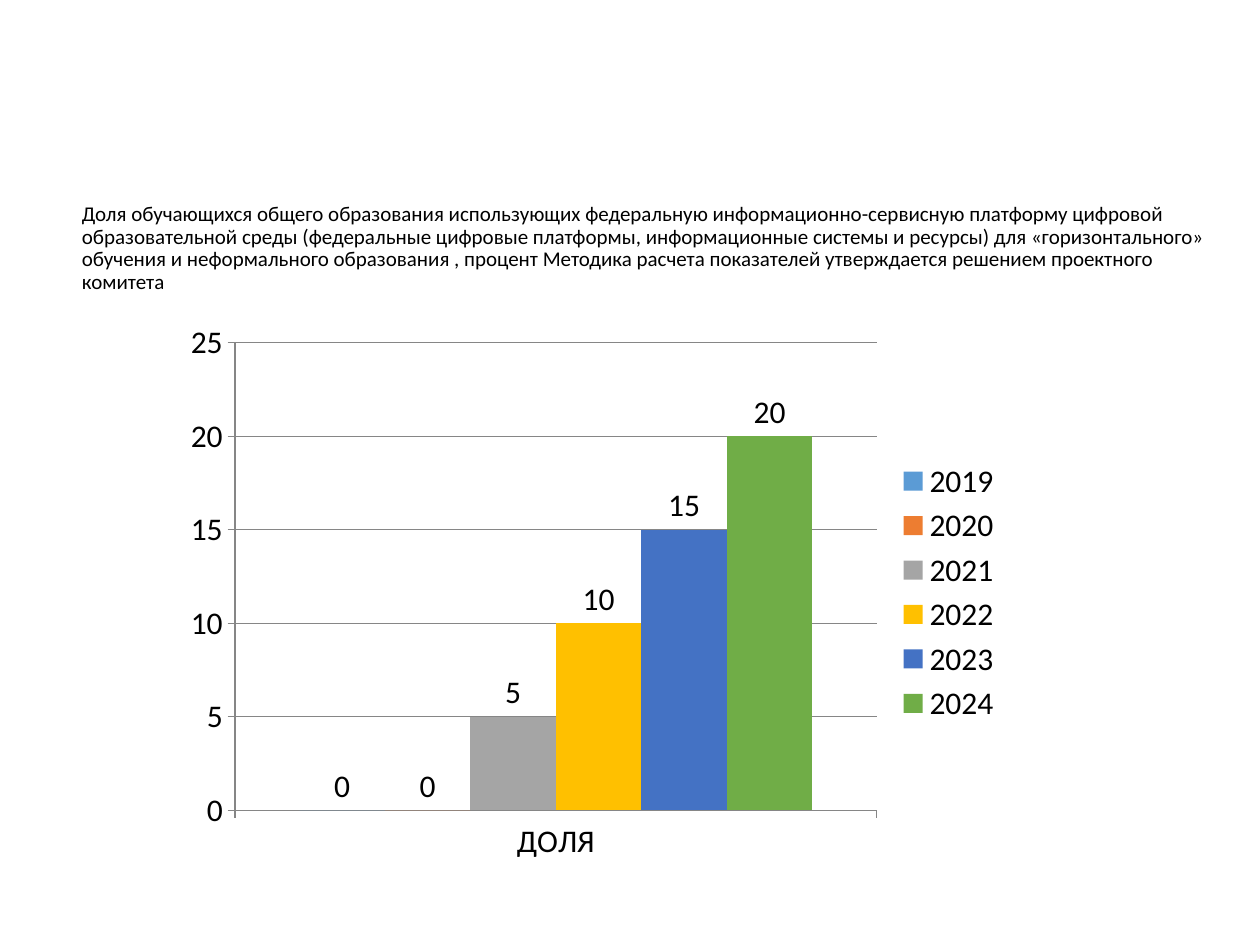
"""Build a slide with a yearly share column chart under a descriptive title."""
import pptx
import pptx.chart.data
import pptx.dml.color
import pptx.enum.chart
import pptx.enum.text
import pptx.util

Pt = pptx.util.Pt
RGB = pptx.dml.color.RGBColor.from_string

theme = {
    "font": "Calibri",
    "text": RGB("000000"),
    "line": RGB("868686"),
    "title_size": Pt(12),
    "chart_size": Pt(18),
}
shares = [
    ("2019", 0, "5B9BD5"),
    ("2020", 0, "ED7D31"),
    ("2021", 5, "A5A5A5"),
    ("2022", 10, "FFC000"),
    ("2023", 15, "4472C4"),
    ("2024", 20, "70AD47"),
]

prs = pptx.Presentation()
prs.slide_width, prs.slide_height = Pt(720), Pt(540)
s = prs.slides.add_slide(prs.slide_layouts[5])

sp = s.shapes.title
sp.left, sp.top, sp.width, sp.height = Pt(39.6), Pt(82), Pt(656.6), Pt(120.2)
tf = sp.text_frame
tf.word_wrap = True
tf.auto_size = pptx.enum.text.MSO_AUTO_SIZE.NONE
tf.vertical_anchor = pptx.enum.text.MSO_ANCHOR.MIDDLE
p = tf.paragraphs[0]
p.alignment = pptx.enum.text.PP_ALIGN.LEFT
p.line_spacing = 0.9
p.space_before = Pt(0)
r = p.add_run()
r.text = (
    "Доля обучающихся общего образования использующих федеральную "
    "информационно-сервисную платформу цифровой образовательной среды "
    "(федеральные цифровые платформы, информационные системы и ресурсы) "
    "для «горизонтального» обучения и неформального образования , процент "
    "Методика расчета показателей утверждается решением проектного комитета"
)
r.font.name = theme["font"]
r.font.size = theme["title_size"]
r.font.color.rgb = theme["text"]

data = pptx.chart.data.CategoryChartData()
data.categories = ["ДОЛЯ"]
for year, share, color in shares:
    data.add_series(year, [share])

chart = s.shapes.add_chart(
    pptx.enum.chart.XL_CHART_TYPE.COLUMN_CLUSTERED,
    Pt(99.4), Pt(178.6), Pt(480.2), Pt(319.7), data,
).chart
chart.has_title = False
chart.font.name = theme["font"]
chart.font.size = theme["chart_size"]
chart.font.color.rgb = theme["text"]
chart.has_legend = True
chart.legend.position = pptx.enum.chart.XL_LEGEND_POSITION.RIGHT
chart.legend.include_in_layout = False

for axis in (chart.category_axis, chart.value_axis):
    axis.major_tick_mark = pptx.enum.chart.XL_TICK_MARK.OUTSIDE
    axis.format.line.color.rgb = theme["line"]
    axis.format.line.width = Pt(0.75)

axis = chart.value_axis
axis.minimum_scale, axis.maximum_scale, axis.major_unit = 0, 25, 5
axis.has_major_gridlines = True
axis.major_gridlines.format.line.color.rgb = theme["line"]
axis.major_gridlines.format.line.width = Pt(0.75)

plot = chart.plots[0]
plot.gap_width = 150
plot.overlap = 0
plot.vary_by_categories = False
for series, (year, share, color) in zip(plot.series, shares):
    series.format.fill.solid()
    series.format.fill.fore_color.rgb = RGB(color)
    labels = series.data_labels
    labels.show_value = True
    labels.position = pptx.enum.chart.XL_LABEL_POSITION.OUTSIDE_END

prs.save("out.pptx")
